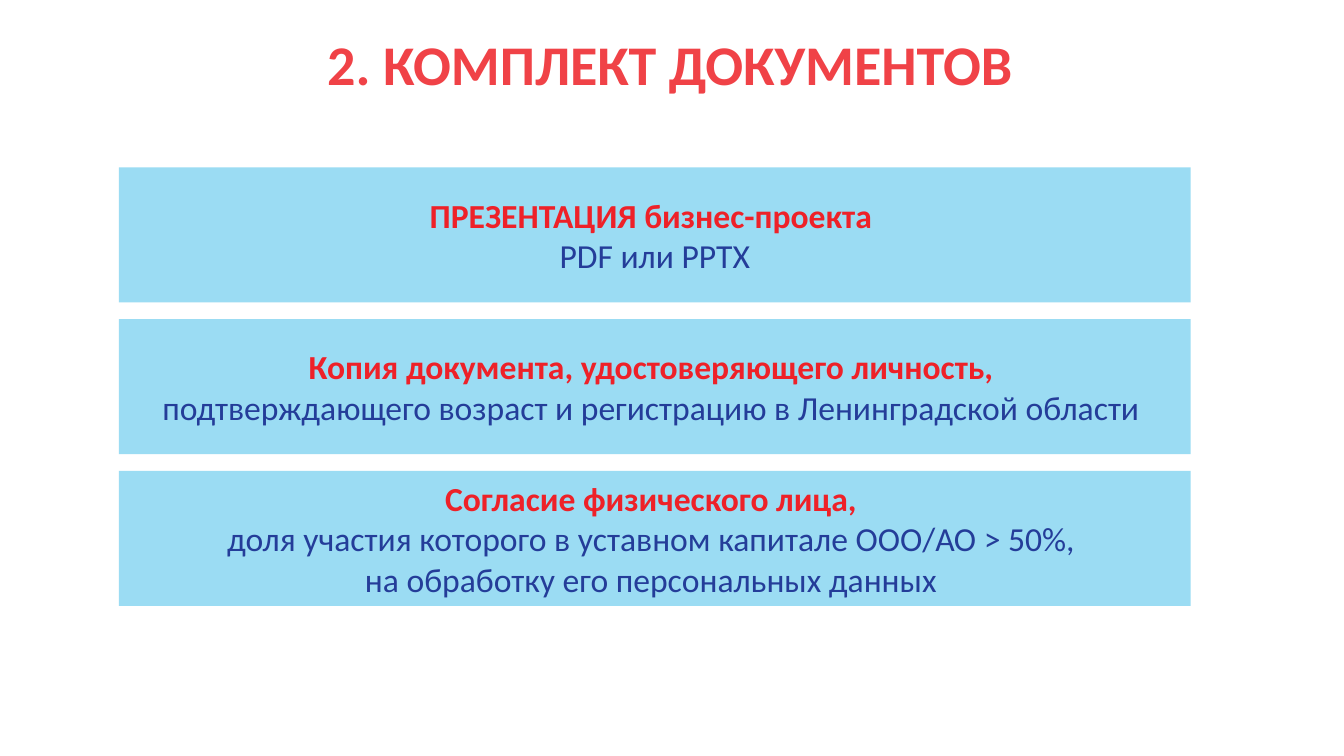
from dataclasses import dataclass
from pptx import Presentation
from pptx.dml.color import RGBColor as Rgb
from pptx.enum.shapes import MSO_SHAPE as Form
from pptx.enum.text import MSO_ANCHOR as Anchor, PP_ALIGN as Align
from pptx.util import Pt


@dataclass(frozen=True)
class Theme:
    face: str = "Calibri"
    title: str = "F04247"
    lead: str = "EE2128"
    body: str = "243D99"
    card: str = "9BDCF3"
    big: int = 40
    text: int = 24


class Board:
    def __init__(self, slide, theme):
        self.slide, self.theme = slide, theme

    def label(self, shape, lines, **form):
        """Fill a shape with lines of (text, size, colour, bold)."""
        frame = shape.text_frame
        frame.word_wrap = True
        frame.vertical_anchor = Anchor.MIDDLE
        for i, (text, size, color, bold) in enumerate(lines):
            para = frame.add_paragraph() if i else frame.paragraphs[0]
            for key, val in {"alignment": Align.CENTER, **form}.items():
                setattr(para, key, val)
            run = para.add_run()
            run.text = text
            look = {"name": self.theme.face, "size": Pt(size), "bold": bold}
            for key, val in look.items():
                setattr(run.font, key, val)
            run.font.color.rgb = Rgb.from_string(color)

    def title(self, text, *box):
        shape = self.slide.shapes.add_textbox(*map(Pt, box))
        look = self.theme
        self.label(shape, [(text, look.big, look.title, True)],
                   line_spacing=0.96)

    def card(self, lead, body, *box):
        look = self.theme
        shape = self.slide.shapes.add_shape(Form.PENTAGON, *map(Pt, box))
        shape.adjustments[0] = 0
        shape.shadow.inherit = False
        shape.fill.solid()
        shape.fill.fore_color.rgb = Rgb.from_string(look.card)
        shape.line.fill.background()
        lines = [(lead, look.text, look.lead, True)]
        lines += [(line, look.text, look.body, False) for line in body]
        self.label(shape, lines)


CARDS = [
    ("ПРЕЗЕНТАЦИЯ бизнес-проекта ", ["PDF или PPTX"]),
    ("Копия документа, удостоверяющего личность, ",
     ["подтверждающего возраст и регистрацию в Ленинградской области "]),
    ("Согласие физического лица, ",
     ["доля участия которого в уставном капитале ООО/АО > 50%, ",
      "на обработку его персональных данных "]),
]


def main():
    deck = Presentation()
    deck.slide_width, deck.slide_height = Pt(960), Pt(540)
    board = Board(deck.slides.add_slide(deck.slide_layouts[6]), Theme())

    # Heading
    board.title("2. КОМПЛЕКТ ДОКУМЕНТОВ", -1.5, -4.3, 960, 103)

    # Stack of document cards
    left, top, wide, high, step = 85, 119.5, 765.4, 96.5, 108.4
    for i, (lead, body) in enumerate(CARDS):
        board.card(lead, body, left, top + i * step, wide, high)

    deck.save("out.pptx")


if __name__ == "__main__":
    main()
